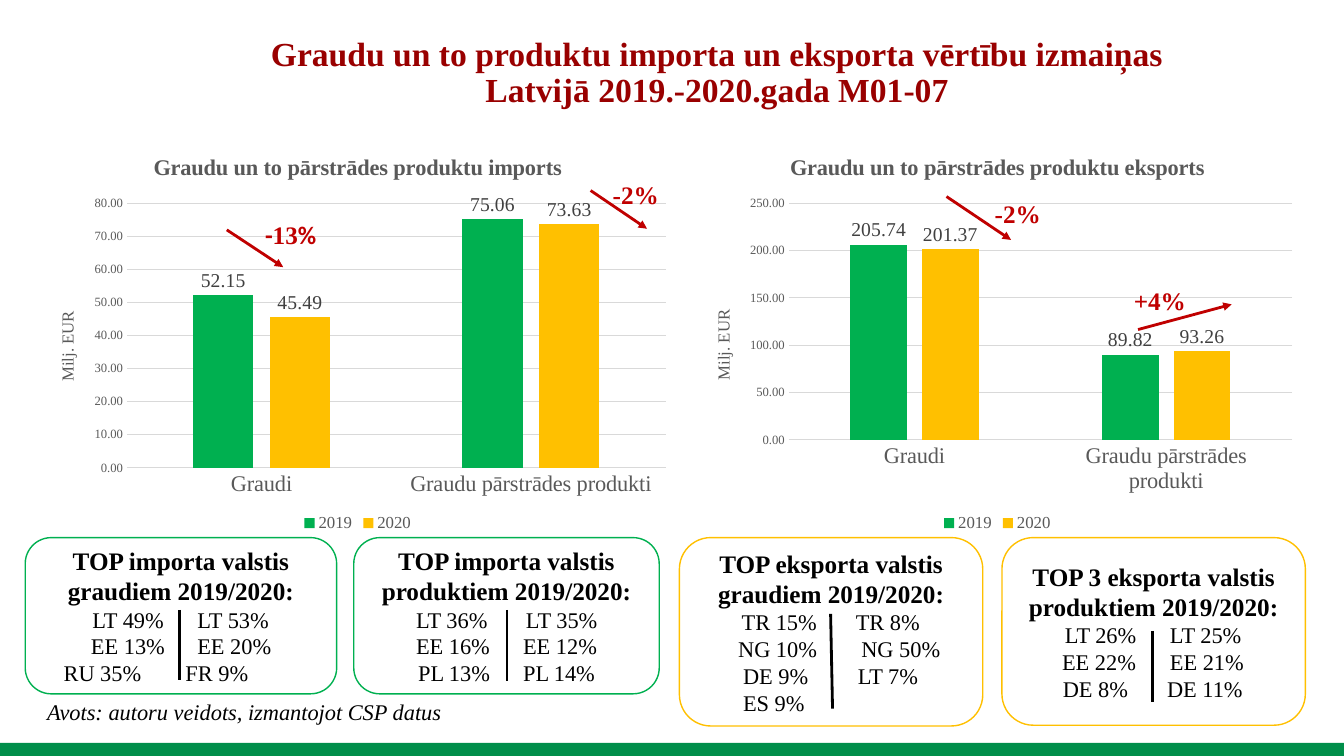
from lxml import etree
from pptx import Presentation
from pptx.chart import data
from pptx.dml import color as dml
from pptx.enum import chart as charts, shapes, text
from pptx.oxml import ns
from pptx.util import Pt

COLORS = {
    "title": "990000", "trend": "C00000", "green": "00B050", "yellow": "FFC000",
    "footer": "008E4A", "black": "000000", "white": "FFFFFF",
    "axis": "595959", "label": "404040", "grid": "D9D9D9",
}
FONT = "Times New Roman"
CORNER_INSET = 0.0488  # text inset of a rounded rectangle, as a share of its height


def rgb(name):
    return dml.RGBColor.from_string(COLORS[name])


def style_font(font, size, color="black", bold=False, italic=False, name=FONT):
    font.name, font.size, font.bold, font.italic = name, Pt(size), bold, italic
    font.color.rgb = rgb(color)


def write(frame, content, align=None, spacing=None, tabs=(), **style):
    """Add one paragraph; content is a string or a list of (string, font name)."""
    first = frame.paragraphs[0]
    paragraph = frame.add_paragraph() if first.runs else first
    if align is not None:
        paragraph.alignment = align
    if spacing:
        paragraph.line_spacing = spacing
    if tabs:
        properties = paragraph._p.get_or_add_pPr()
        tab_list = etree.SubElement(properties, ns.qn("a:tabLst"))
        for position in tabs:
            etree.SubElement(tab_list, ns.qn("a:tab"), pos=str(int(Pt(position))), algn="l")
    pieces = [(content, FONT)] if isinstance(content, str) else content
    for piece, name in pieces:
        run = paragraph.add_run()
        run.text = piece
        style_font(run.font, name=name, **style)


class SlideBuilder:
    def __init__(self, slide):
        self.slide = slide

    def box(self, kind, left, top, width, height, fill, line=None):
        shape = self.slide.shapes.add_shape(kind, Pt(left), Pt(top), Pt(width), Pt(height))
        shape.shadow.inherit = False
        shape.fill.solid()
        shape.fill.fore_color.rgb = rgb(fill)
        if line:
            shape.line.color.rgb = rgb(line)
            shape.line.width = Pt(1)
        else:
            shape.line.fill.background()
        return shape

    def text(self, left, top, width, height, content, anchor=text.MSO_ANCHOR.TOP, **style):
        shape = self.slide.shapes.add_textbox(Pt(left), Pt(top), Pt(width), Pt(height))
        shape.text_frame.word_wrap = True
        shape.text_frame.vertical_anchor = anchor
        write(shape.text_frame, content, **style)

    def card(self, left, width, height, line, heading, rows):
        """Each row is (text, x, text, x), with x measured from the card's left edge."""
        shape = self.box(shapes.MSO_SHAPE.ROUNDED_RECTANGLE, left, 384, width, height, "white", line)
        frame = shape.text_frame
        frame.word_wrap = True
        frame.vertical_anchor = text.MSO_ANCHOR.MIDDLE
        frame.margin_left = frame.margin_right = frame.margin_top = frame.margin_bottom = 0
        write(frame, heading, align=text.PP_ALIGN.CENTER, size=18, bold=True)
        inset = height * CORNER_INSET
        for row in rows:
            write(frame, "".join("\t" + country for country in row[::2]),
                  align=text.PP_ALIGN.LEFT, tabs=[x - inset for x in row[1::2]], size=16)

    def line(self, x1, y1, x2, y2, color, arrow=False):
        connector = self.slide.shapes.add_connector(
            shapes.MSO_CONNECTOR.STRAIGHT, Pt(x1), Pt(y1), Pt(x2), Pt(y2))
        connector.line.color.rgb = rgb(color)
        connector.line.width = Pt(2)
        if arrow:
            etree.SubElement(connector.line._get_or_add_ln(), ns.qn("a:tailEnd"), type="triangle")
        etree.SubElement(connector._element.spPr, ns.qn("a:effectLst"))

    def chart(self, left, width, title, series, maximum, step, layout):
        chart_data = data.CategoryChartData(number_format="0.00")
        chart_data.categories = ["Graudi", "Graudu pārstrādes produkti"]
        for name, values in series.items():
            chart_data.add_series(name, values)
        chart = self.slide.shapes.add_chart(
            charts.XL_CHART_TYPE.COLUMN_CLUSTERED,
            Pt(left), Pt(96.5), Pt(width), Pt(286.5), chart_data).chart
        style_font(chart.font, 10)
        chart.has_title = True
        write(chart.chart_title.text_frame, title, size=16, color="axis", bold=True)
        chart.chart_title.include_in_layout = False
        chart.has_legend = True
        chart.legend.position = charts.XL_LEGEND_POSITION.BOTTOM
        chart.legend.include_in_layout = False
        style_font(chart.legend.font, 12, "axis")

        # Axes
        category, value = chart.category_axis, chart.value_axis
        for axis, size in ((category, 16), (value, 9)):
            axis.major_tick_mark = axis.minor_tick_mark = charts.XL_TICK_MARK.NONE
            style_font(axis.tick_labels.font, size, "axis")
        category.format.line.color.rgb = rgb("grid")
        category.format.line.width = Pt(0.75)
        value.format.line.fill.background()
        value.major_gridlines.format.line.color.rgb = rgb("grid")
        value.major_gridlines.format.line.width = Pt(0.75)
        value.minimum_scale, value.maximum_scale, value.major_unit = 0, maximum, step
        value.tick_labels.number_format = "0.00"
        value.tick_labels.number_format_is_linked = False
        write(value.axis_title.text_frame, "Milj. EUR", size=12, color="axis")

        # Columns
        plot = chart.plots[0]
        plot.gap_width, plot.overlap, plot.vary_by_categories = 219, -27, False
        for column, color in zip(plot.series, ("green", "yellow")):
            column.format.fill.solid()
            column.format.fill.fore_color.rgb = rgb(color)
            labels = column.data_labels
            labels.show_value = True
            labels.position = charts.XL_LABEL_POSITION.OUTSIDE_END
            labels.number_format, labels.number_format_is_linked = "0.00", False
            style_font(labels.font, 14, "label")

        # Plot area placement
        area = chart._chartSpace.chart.plotArea
        for old in area.findall(ns.qn("c:layout")):
            area.remove(old)
        node = etree.Element(ns.qn("c:layout"))
        area.insert(0, node)
        manual = etree.SubElement(node, ns.qn("c:manualLayout"))
        settings = [("layoutTarget", "inner"), ("xMode", "edge"), ("yMode", "edge")]
        for tag, setting in settings + list(zip("xywh", layout)):
            etree.SubElement(manual, ns.qn("c:" + tag), val=str(setting))


def main():
    presentation = Presentation()
    presentation.slide_width, presentation.slide_height = Pt(960), Pt(540)
    builder = SlideBuilder(presentation.slides.add_slide(presentation.slide_layouts[6]))

    # Footer, source and title
    builder.box(shapes.MSO_SHAPE.RECTANGLE, 0, 530.6, 960, 9.4, "footer")
    builder.text(26.6, 495.4, 615.6, 27, "Avots: autoru veidots, izmantojot CSP datus",
                 size=16, italic=True)
    builder.text(182, 20, 660, 65.5,
                 "Graudu un to produktu importa un eksporta vērtību izmaiņas "
                 "Latvijā 2019.-2020.gada M01-07", anchor=text.MSO_ANCHOR.MIDDLE,
                 align=text.PP_ALIGN.CENTER, spacing=0.9, size=24, color="title", bold=True)

    # Top country cards
    builder.card(18, 222.5, 111.6, "green", "TOP importa valstis graudiem 2019/2020:", [
        ("LT 49%", 48, "LT 53%", 123), ("EE 13%", 47, "EE 20%", 123),
        ("RU 35%", 27.5, "FR 9%", 114.5)])
    builder.card(252.7, 218.2, 111.6, "green", "TOP importa valstis produktiem 2019/2020:", [
        ("LT 36%", 44.5, "LT 35%", 123), ("EE 16%", 44.5, "EE 12%", 121),
        ("PL 13%", 46, "PL 14%", 121)])
    builder.card(485.3, 216.7, 134.6, "yellow", "TOP eksporta valstis graudiem 2019/2020:", [
        ("TR 15%", 44.5, "TR 8%", 126), ("NG 10%", 42, "NG 50%", 130),
        ("DE 9%", 45.5, "LT 7%", 127.5), ("ES 9%", 45.5)])
    builder.card(715.7, 216.7, 134, "yellow", "TOP 3 eksporta valstis produktiem 2019/2020:", [
        ("LT 26%", 45, "LT 25%", 120), ("EE 22%", 43, "EE 21%", 120),
        ("DE 8%", 43.5, "DE 11%", 118)])

    # Charts
    builder.chart(26.6, 458, "Graudu un to pārstrādes produktu imports",
                  {"2019": (52.15, 75.06), "2020": (45.49, 73.63)}, 80, 10,
                  (0.14, 0.17, 0.84, 0.66))
    builder.chart(493.2, 438.5, "Graudu un to pārstrādes produktu eksports",
                  {"2019": (205.74, 89.82), "2020": (201.37, 93.26)}, 250, 50,
                  (0.16, 0.17, 0.82, 0.59))

    # Trend arrows and their labels
    for ends in ((162, 164.2, 202.3, 190.8), (421.9, 136.1, 462.2, 163.4),
                 (676.1, 140.4, 722.2, 171.4), (812.9, 235.4, 879.8, 217.4)):
        builder.line(*ends, "trend", arrow=True)
    mixed = [("-", "Calibri"), ("13", FONT), ("%", "Calibri")]
    for left, top, width, change in ((182.2, 153.4, 63, mixed), (430.6, 124.6, 50, "-2%"),
                                     (703.4, 138.2, 59, "-2%"), (802.8, 200.2, 55, "+4%")):
        builder.text(left, top, width, 23, change, size=18, color="trend", bold=True)

    # Dividers between the two years
    for ends in ((128.2, 435.6, 128.2, 486), (362.2, 435.6, 362.2, 486.7),
                 (593.3, 438.5, 594.7, 506.2), (823, 450.7, 823, 501.1)):
        builder.line(*ends, "black")

    presentation.save("out.pptx")


if __name__ == "__main__":
    main()
